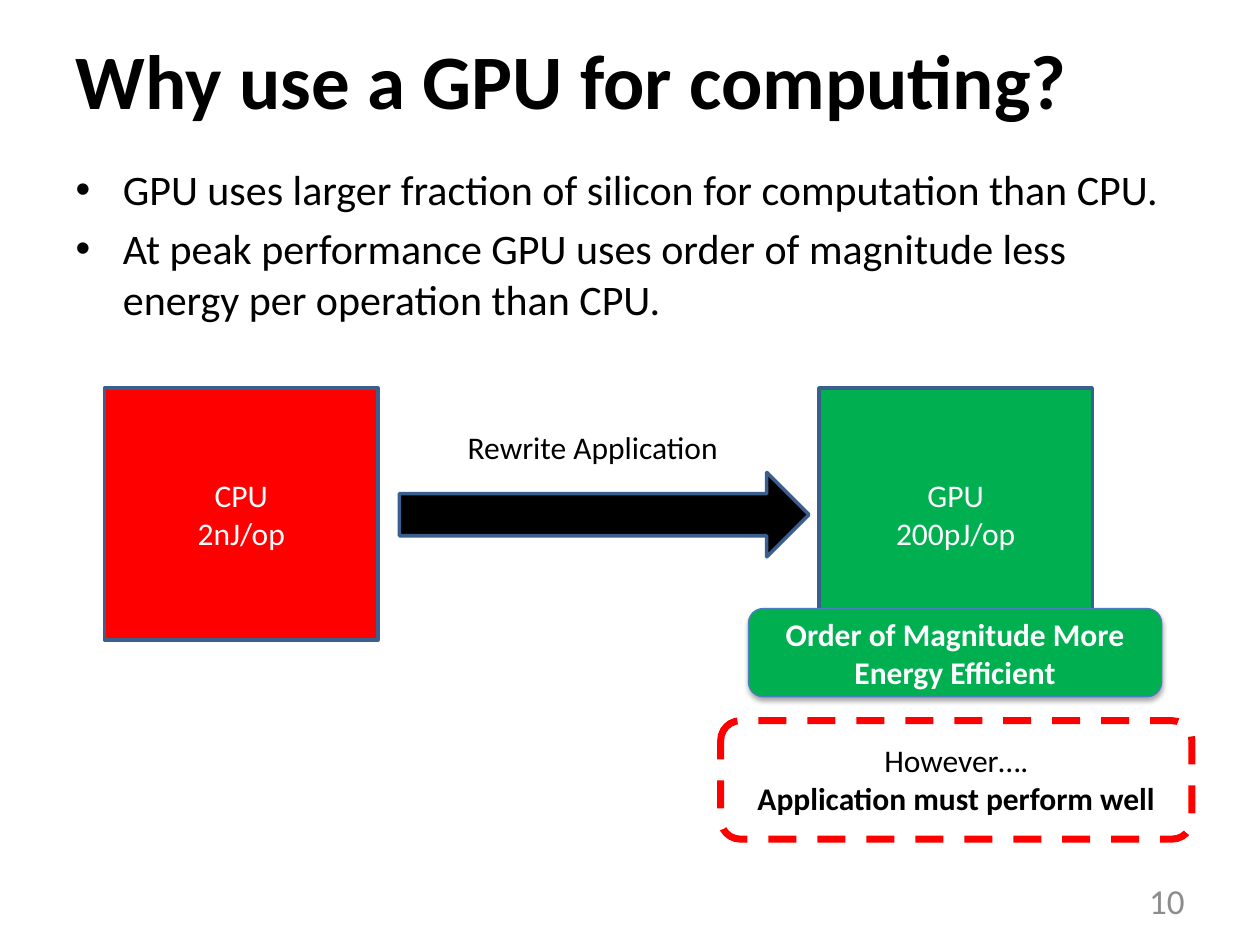
"""Build the slide on why a GPU is used for computing."""
import lxml.etree
import pptx
import pptx.dml.color
import pptx.enum.dml
import pptx.enum.shapes
import pptx.enum.text
import pptx.oxml.ns
import pptx.util

Inches = pptx.util.Inches
Pt = pptx.util.Pt
SHAPES = pptx.enum.shapes.MSO_SHAPE
ALIGN = pptx.enum.text.PP_ALIGN
ANCHOR = pptx.enum.text.MSO_ANCHOR
BLACK, WHITE, RED, GREEN = "000000", "FFFFFF", "FF0000", "00B050"
OUTLINE = "3A5F8C"


def color(value):
    """Return the colour for a hex string."""
    return pptx.dml.color.RGBColor.from_string(value)


def place(shape, left, top, width, height):
    """Move and size a shape in inches."""
    shape.left, shape.top = Inches(left), Inches(top)
    shape.width, shape.height = Inches(width), Inches(height)


def write(shape, text, size, ink, align, anchor, bold=False):
    """Fill a shape with text, one paragraph a line, and format it."""
    frame = shape.text_frame
    frame.text = text
    frame.word_wrap = True
    frame.vertical_anchor = anchor
    for para in frame.paragraphs:
        para.alignment = align
        for span in para.runs:
            span.font.name = "Calibri"
            span.font.size = Pt(size)
            span.font.bold = bold
            span.font.color.rgb = color(ink)


def add_label(page, place_at, text, size=18, ink=BLACK, align=ALIGN.CENTER, anchor=ANCHOR.TOP):
    """Add a text box and return it."""
    box = page.shapes.add_textbox(*map(Inches, place_at))
    write(box, text, size, ink, align, anchor)
    return box


def add_block(page, kind, place_at, fill, line, weight, text="", bold=False):
    """Add a preset shape, hollow when fill is None, and return it."""
    block = page.shapes.add_shape(kind, *map(Inches, place_at))
    block.shadow.inherit = False
    if fill:
        block.fill.solid()
        block.fill.fore_color.rgb = color(fill)
    else:
        block.fill.background()
    block.line.color.rgb = color(line)
    block.line.width = Pt(weight)
    if text:
        write(block, text, 18, WHITE, ALIGN.CENTER, ANCHOR.MIDDLE, bold)
    return block


def add_shadow(shape, blur, distance, opacity):
    """Give a shape a soft black shadow straight below it."""
    qn = pptx.oxml.ns.qn
    effects = shape.element.spPr.find(qn("a:effectLst"))
    shadow = lxml.etree.SubElement(
        effects, qn("a:outerShdw"), blurRad=str(Pt(blur)), dist=str(Pt(distance)),
        dir="5400000", rotWithShape="0")
    ink = lxml.etree.SubElement(shadow, qn("a:srgbClr"), val=BLACK)
    lxml.etree.SubElement(ink, qn("a:alpha"), val=str(opacity * 1000))


def main():
    """Build and save the deck."""
    deck = pptx.Presentation()
    deck.slide_width, deck.slide_height = Inches(10), Inches(7.5)
    page = deck.slides.add_slide(deck.slide_layouts[1])

    title, body = page.placeholders
    place(title, 0.5, 0, 9, 1.25)
    write(title, "Why use a GPU for computing?", 44, BLACK, ALIGN.LEFT, ANCHOR.MIDDLE, True)
    place(body, 0.5, 1.25, 9, 5.28)
    write(body, "GPU uses larger fraction of silicon for computation than CPU.\n"
          "At peak performance GPU uses order of magnitude less energy per operation than CPU.",
          24, BLACK, ALIGN.LEFT, ANCHOR.TOP)
    add_label(page, (7.17, 6.95, 2.33, 0.4), "10", 20, "8C8C8C", ALIGN.RIGHT, ANCHOR.MIDDLE)

    for left, fill, text in ((0.83, RED, "CPU\n2nJ/op"), (6.5, GREEN, "GPU\n200pJ/op")):
        add_block(page, SHAPES.RECTANGLE, (left, 3.08, 2.17, 2), fill, OUTLINE, 2, text)
    add_block(page, SHAPES.RIGHT_ARROW, (3.17, 3.75, 3.25, 0.67), BLACK, OUTLINE, 2)
    add_label(page, (3.58, 3.35, 2.25, 0.4), "Rewrite Application")

    benefit = add_block(page, SHAPES.ROUNDED_RECTANGLE, (5.94, 4.83, 3.28, 0.7), GREEN,
                        "4B7EBC", 0.75, "Order of Magnitude More Energy Efficient", True)
    add_shadow(benefit, 3.1, 1.8, 35)

    caveat = add_label(page, (5.65, 5.83, 3.88, 0.71), "However….\nApplication must perform well")
    caveat.text_frame.paragraphs[1].runs[0].font.bold = True
    border = add_block(page, SHAPES.ROUNDED_RECTANGLE, (5.72, 5.72, 3.74, 0.94), None, RED, 4)
    border.line.dash_style = pptx.enum.dml.MSO_LINE.DASH

    deck.save("out.pptx")


if __name__ == "__main__":
    main()
